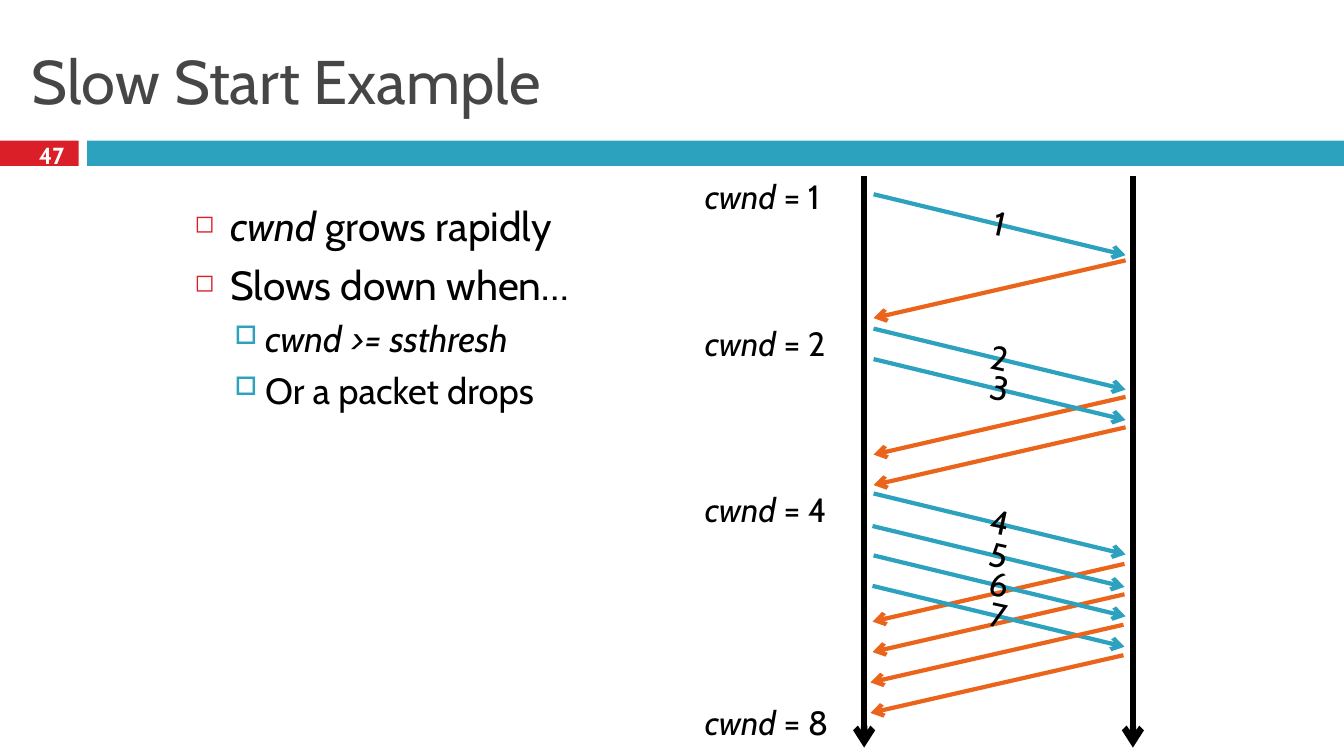
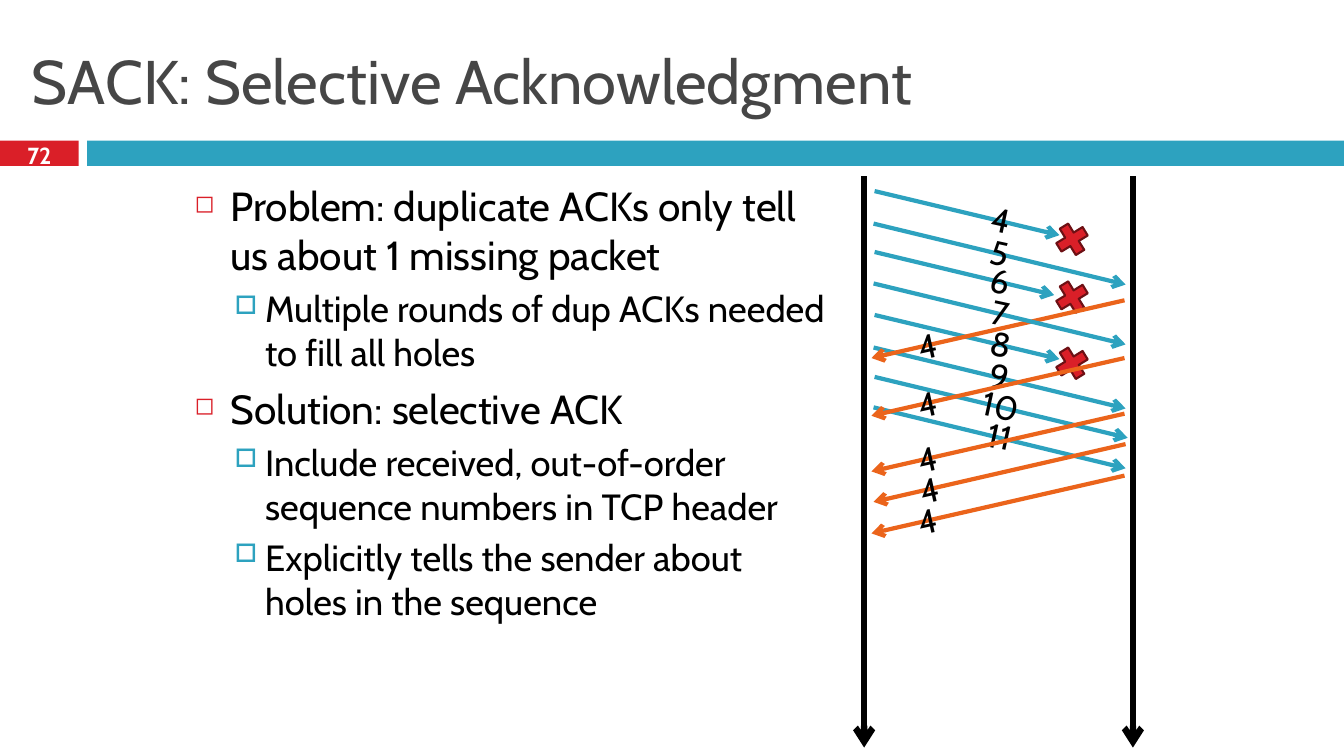
"""Build two slides on TCP slow start and selective acknowledgment."""
from dataclasses import dataclass

from lxml.etree import SubElement
from pptx import Presentation
from pptx.dml.color import RGBColor as RGB
from pptx.enum.shapes import MSO_CONNECTOR as CONN, MSO_SHAPE as SHAPE
from pptx.enum.text import MSO_ANCHOR as ANCHOR, PP_ALIGN as ALIGN
from pptx.oxml.ns import qn
from pptx.util import Pt

PX = 9525


@dataclass(frozen=True)
class Theme:
    font: str = "Cabin"
    ink: str = "000000"
    title: str = "464646"
    white: str = "FFFFFF"
    red: str = "DA1F28"
    dark_red: str = "6D1014"
    teal: str = "2DA2BF"
    orange: str = "EB641B"
    title_size: float = 44
    number_size: float = 16.6
    label_size: float = 24


T = Theme()

LEVELS = [
    dict(size=29, before=7, margin=34, indent=-34, char="◻", color=T.red, scale="60000"),
    dict(size=26, before=5.5, margin=67, indent=-29, char="□", color=T.teal, scale="70000"),
]
BANDS = [(0, 75, T.red), (83, 1197, T.teal)]
TIMELINES = [823, 1079]

SLIDES = [
    dict(
        title="Slow Start Example",
        number="47",
        number_box=(21, 132, 56, 32),
        body_box=(176, 187, 444, 516),
        body=[
            (0, "cwnd* grows rapidly"),
            (0, "Slows down when…"),
            (1, "cwnd >= ssthresh*"),
            (1, "Or a packet drops"),
        ],
        windows=[(163, 1), (303, 2), (461, 4), (664, 8)],
        lost=[],
        messages=[
            (1072, 832, 248, ""),
            (1072, 832, 378, ""),
            (1072, 832, 407, ""),
            (1071, 831, 537, ""),
            (1071, 831, 566, ""),
            (832, 1072, 185, "1"),
            (832, 1072, 313, "2"),
            (832, 1072, 342, "3"),
            (832, 1072, 470, "4"),
            (831, 1071, 501, "5"),
            (832, 1072, 529, "6"),
            (831, 1071, 558, "7"),
            (1070, 829, 595, ""),
            (1070, 829, 624, ""),
        ],
    ),
    dict(
        title="SACK: Selective Acknowledgment",
        number="72",
        number_box=(0, 132, 75, 32),
        body_box=(176, 168, 621, 536),
        body=[
            (0, "Problem: duplicate ACKs only tell us about 1 missing packet"),
            (1, "Multiple rounds of dup ACKs needed to fill all holes"),
            (0, "Solution: selective ACK"),
            (1, "Include received, out-of-order sequence numbers in TCP header"),
            (1, "Explicitly tells the sender about holes in the sequence"),
        ],
        windows=[],
        lost=[208, 263, 326],
        messages=[
            (833, 1009, 300, "8"),
            (832, 1072, 331, "9"),
            (833, 1074, 359, "10"),
            (832, 1072, 388, "11"),
            (1071, 830, 286, "4"),
            (833, 1009, 182, "4"),
            (832, 1072, 213, "5"),
            (833, 1004, 240, "6"),
            (832, 1072, 270, "7"),
            (1071, 830, 341, "4"),
            (1071, 830, 394, "4"),
            (1072, 832, 423, "4"),
            (1071, 830, 453, "4"),
        ],
    ),
]


def add_text(s, box, text, size, color=T.ink, bold=False, align=ALIGN.LEFT, anchor=ANCHOR.TOP):
    """Add a text box; words before an asterisk are italic."""
    sp = s.shapes.add_textbox(*(n * PX for n in box))
    tf = sp.text_frame
    tf.word_wrap = True
    tf.vertical_anchor = anchor
    tf.text = text
    for p in tf.paragraphs:
        p.alignment = align
        lead, star, rest = p.text.partition("*")
        if star:
            p.text = lead
            p.runs[0].font.italic = True
            if rest:
                p.add_run().text = rest
        for r in p.runs:
            r.font.name = T.font
            r.font.size = Pt(size)
            r.font.bold = bold
            r.font.color.rgb = RGB.from_string(color)
    return sp


def add_arrow(s, x1, y1, x2, y2, color, width):
    """Add a straight arrow without a shadow."""
    c = s.shapes.add_connector(CONN.STRAIGHT, x1 * PX, y1 * PX, x2 * PX, y2 * PX)
    c.line.color.rgb = RGB.from_string(color)
    c.line.width = Pt(width)
    sp_pr = c._element.spPr
    SubElement(sp_pr.find(qn("a:ln")), qn("a:tailEnd"), type="arrow")
    SubElement(sp_pr, qn("a:effectLst"))


prs = Presentation()
prs.slide_width, prs.slide_height = 1280 * PX, 720 * PX

for data in SLIDES:
    s = prs.slides.add_slide(prs.slide_layouts[6])

    for x, w, color in BANDS:
        sp = s.shapes.add_shape(SHAPE.RECTANGLE, x * PX, 134 * PX, w * PX, 24 * PX)
        sp.shadow.inherit = False
        sp.fill.solid()
        sp.fill.fore_color.rgb = RGB.from_string(color)
        sp.line.fill.background()
    add_text(s, (21, 24, 1237, 104), data["title"], T.title_size, T.title, anchor=ANCHOR.MIDDLE)
    add_text(s, data["number_box"], data["number"], T.number_size, T.white, bold=True,
             align=ALIGN.CENTER, anchor=ANCHOR.MIDDLE)

    lines = "\n".join(text for _, text in data["body"])
    body = add_text(s, data["body_box"], lines, LEVELS[0]["size"])
    for p, (level, _) in zip(body.text_frame.paragraphs, data["body"]):
        style = LEVELS[level]
        p.level = level
        p.space_before = Pt(style["before"])
        for r in p.runs:
            r.font.size = Pt(style["size"])
        p_pr = p._p.get_or_add_pPr()
        p_pr.set("marL", str(style["margin"] * PX))
        p_pr.set("indent", str(style["indent"] * PX))
        SubElement(SubElement(p_pr, qn("a:buClr")), qn("a:srgbClr"), val=style["color"])
        SubElement(p_pr, qn("a:buSzPct"), val=style["scale"])
        SubElement(p_pr, qn("a:buChar"), char=style["char"])

    for x in TIMELINES:
        add_arrow(s, x, 168, x, 712, T.ink, 4.5)
    for y, size in data["windows"]:
        add_text(s, (662, y, 139, 48), f"cwnd* = {size}", T.label_size)

    for y in data["lost"]:
        sp = s.shapes.add_shape(SHAPE.MATH_MULTIPLY, 1001 * PX, y * PX, 40 * PX, 40 * PX)
        sp.shadow.inherit = False
        sp.rotation = 13.5
        sp.fill.solid()
        sp.fill.fore_color.rgb = RGB.from_string(T.red)
        sp.line.color.rgb = RGB.from_string(T.dark_red)
        sp.line.width = Pt(1.5)

    for x1, x2, y, label in data["messages"]:
        if x2 > x1:
            color, slope, angle, label_x, label_y = T.teal, 0.24, 12.3, x1 + 67, y + 3
        else:
            color, slope, angle, label_x, label_y = T.orange, 0.23, 347.5, x2, y + 19
        add_arrow(s, x1, y, x2, y + round(abs(x2 - x1) * slope), color, 3)
        if label:
            sp = add_text(s, (label_x, label_y, 107, 48), label, T.label_size, align=ALIGN.CENTER)
            sp.rotation = angle

prs.save("out.pptx")
